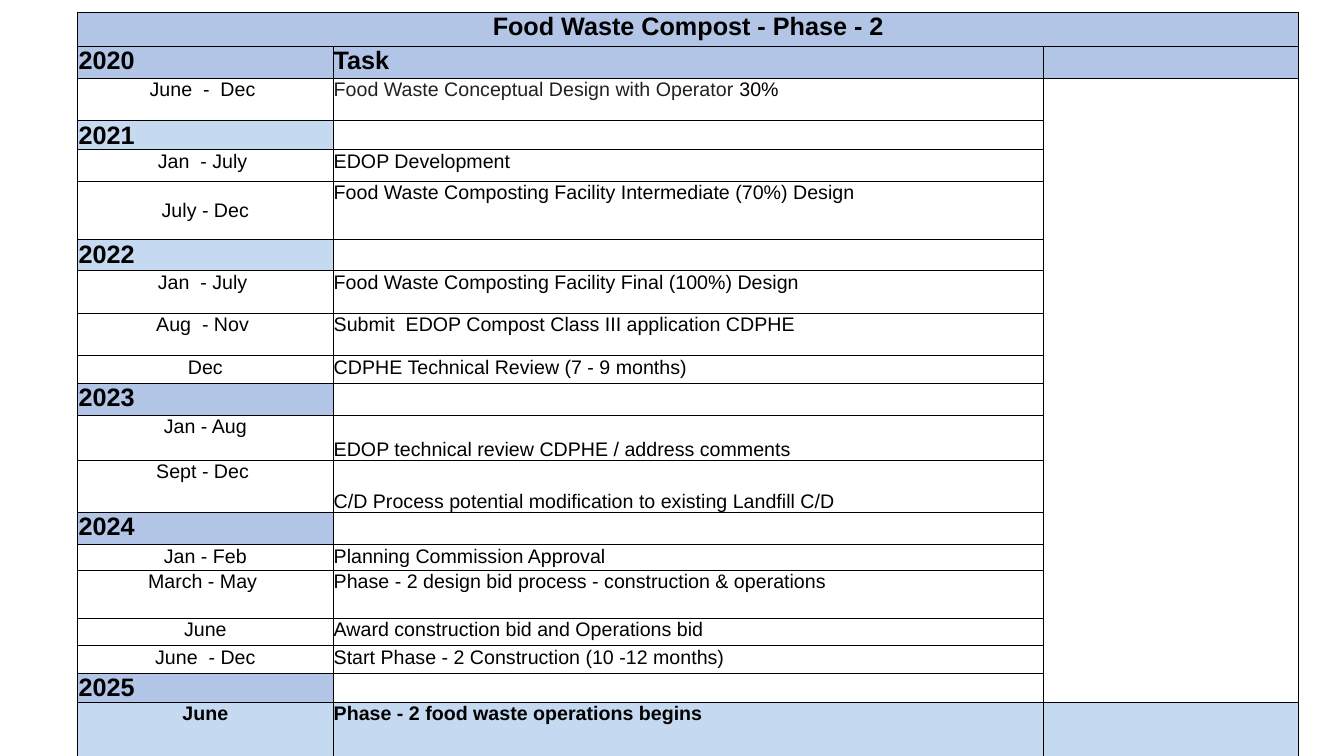
import pptx
import pptx.dml.color
import pptx.enum.text
import pptx.oxml
import pptx.oxml.ns
import pptx.util
from pptx.util import Cm

FONT = "Arial"
BLACK, CHARCOAL, WHITE = "000000", "212121", "FFFFFF"
BLUE, PALE = "B3C5E7", "C5D9F1"
TOP = pptx.enum.text.MSO_ANCHOR.TOP
MIDDLE = pptx.enum.text.MSO_ANCHOR.MIDDLE
BOTTOM = pptx.enum.text.MSO_ANCHOR.BOTTOM
LEFT = pptx.enum.text.PP_ALIGN.LEFT
CENTER = pptx.enum.text.PP_ALIGN.CENTER
COLUMNS = [6.43, 17.91, 6.43]

TITLE = "Food Waste Compost - Phase - 2"
CONCEPT = [("Food Waste Conceptual Design with Operator", CHARCOAL), (" 30%", BLACK)]

SCHEDULE = [
    ("title", 0.86, TITLE, ""),
    ("header", 0.81, "2020", "Task"),
    ("task", 1.07, "June  -  Dec ", CONCEPT),
    ("pale year", 0.69, "2021", ""),
    ("task", 0.79, "Jan  - July ", "EDOP Development"),
    ("middle task", 1.47, "July - Dec", "Food Waste Composting Facility Intermediate (70%) Design"),
    ("pale year", 0.79, "2022", ""),
    ("task", 1.07, "Jan  - July ", "Food Waste Composting Facility Final (100%) Design"),
    ("task", 1.07, "Aug  - Nov ", "Submit  EDOP Compost Class III application CDPHE"),
    ("task", 0.69, "Dec", "CDPHE Technical Review (7 - 9 months)"),
    ("year", 0.81, "2023", ""),
    ("low task", 1.14, "Jan - Aug", "EDOP technical review CDPHE / address comments"),
    ("low task", 1.31, "Sept - Dec ", "C/D Process potential modification to existing Landfill C/D"),
    ("year", 0.81, "2024", ""),
    ("task", 0.64, "Jan - Feb", "Planning Commission Approval"),
    ("task", 1.22, "March - May ", "Phase - 2 design bid process - construction & operations"),
    ("task", 0.69, "June", "Award construction bid and Operations bid"),
    ("task", 0.69, "June  - Dec", "Start Phase - 2 Construction (10 -12 months)"),
    ("year", 0.69, "2025", ""),
    ("finish", 1.47, "June", "Phase - 2 food waste operations begins"),
]

STYLES = {
    "title": dict(fills=[BLUE] * 3, size=18, bold=True, align=CENTER),
    "header": dict(fills=[BLUE] * 3, size=18, bold=True),
    "year": dict(fills=[BLUE, WHITE, WHITE], size=18, bold=True),
    "pale year": dict(fills=[PALE, WHITE, WHITE], size=18, bold=True),
    "task": dict(align=CENTER),
    "middle task": dict(align=CENTER, anchors=[MIDDLE, TOP]),
    "low task": dict(align=CENTER, anchors=[TOP, BOTTOM]),
    "finish": dict(fills=[PALE] * 3, bold=True, align=CENTER),
}


def rgb(value):
    return pptx.dml.color.RGBColor.from_string(value)


def set_borders(cell, hidden):
    props = cell._tc.get_or_add_tcPr()
    for side in "LRTB":
        paint = "<a:noFill/>" if side in hidden else (
            f'<a:solidFill><a:srgbClr val="{BLACK}"/></a:solidFill>')
        props.append(pptx.oxml.parse_xml(
            f'<a:ln{side} {pptx.oxml.ns.nsdecls("a")} w="6350">{paint}</a:ln{side}>'))


def format_cell(cell, fill, anchor=TOP, hidden=""):
    cell.margin_left = cell.margin_right = cell.margin_top = Cm(0.02)
    cell.margin_bottom = Cm(0)
    cell.vertical_anchor = anchor
    set_borders(cell, hidden)
    cell.fill.solid()
    cell.fill.fore_color.rgb = rgb(fill)


def write_cell(cell, text, size, bold, align):
    p = cell.text_frame.paragraphs[0]
    p.alignment = align
    if not text:
        p._p.append(pptx.oxml.parse_xml(
            f'<a:endParaRPr {pptx.oxml.ns.nsdecls("a")} sz="1400"/>'))
        return
    runs = [(text, BLACK)] if isinstance(text, str) else text
    for words, color in runs:
        r = p.add_run()
        r.text = words
        r.font.name = FONT
        r.font.size = pptx.util.Pt(size)
        r.font.bold = bold
        r.font.color.rgb = rgb(color)


def hidden_sides(row, column):
    first, last = 2, len(SCHEDULE) - 2
    if column != 2 or not first <= row <= last:
        return ""
    return ("T" if row > first else "") + ("B" if row < last else "")


def fill_row(table, row, kind, period, task):
    style = STYLES[kind]
    fills = style.get("fills", [WHITE] * 3)
    anchors = style.get("anchors", [TOP, TOP]) + [TOP]
    aligns = [style.get("align", LEFT), LEFT, LEFT]
    for column, text in enumerate([period, task, ""]):
        cell = table.cell(row, column)
        format_cell(cell, fills[column], anchors[column], hidden_sides(row, column))
        write_cell(cell, text, style.get("size", 14), style.get("bold", False), aligns[column])


def add_schedule(slide):
    heights = [height for _, height, _, _ in SCHEDULE]
    frame = slide.shapes.add_table(
        len(SCHEDULE), len(COLUMNS), Cm(1.96), Cm(0.3), Cm(sum(COLUMNS)), Cm(sum(heights)))
    table = frame.table
    table.first_row = table.horz_banding = False
    for column, width in zip(table.columns, COLUMNS):
        column.width = Cm(width)
    for row, (kind, height, period, task) in enumerate(SCHEDULE):
        table.rows[row].height = Cm(height)
        fill_row(table, row, kind, period, task)
    table.cell(0, 0).merge(table.cell(0, 2))


def main():
    prs = pptx.Presentation()
    prs.slide_width, prs.slide_height = Cm(33.87), Cm(19.05)
    slide = prs.slides.add_slide(prs.slide_layouts[6])
    add_schedule(slide)
    prs.save("out.pptx")


if __name__ == "__main__":
    main()
